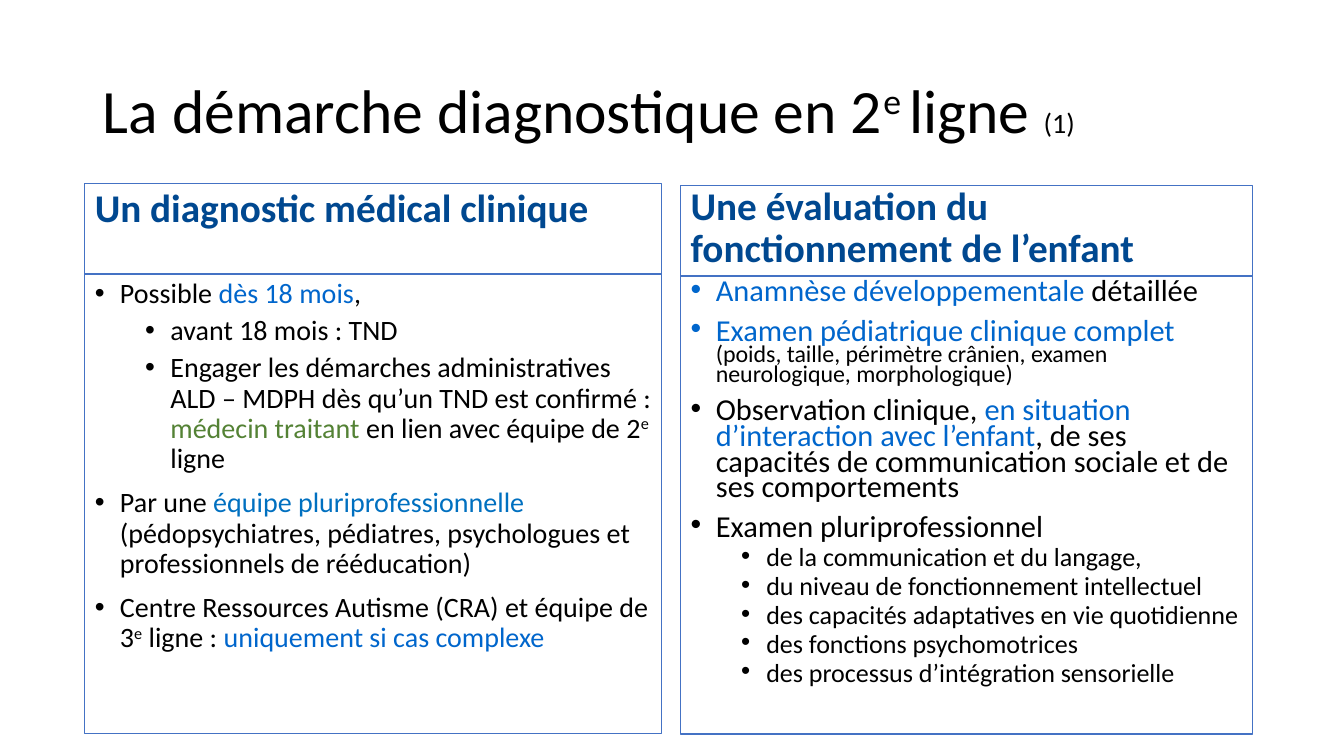
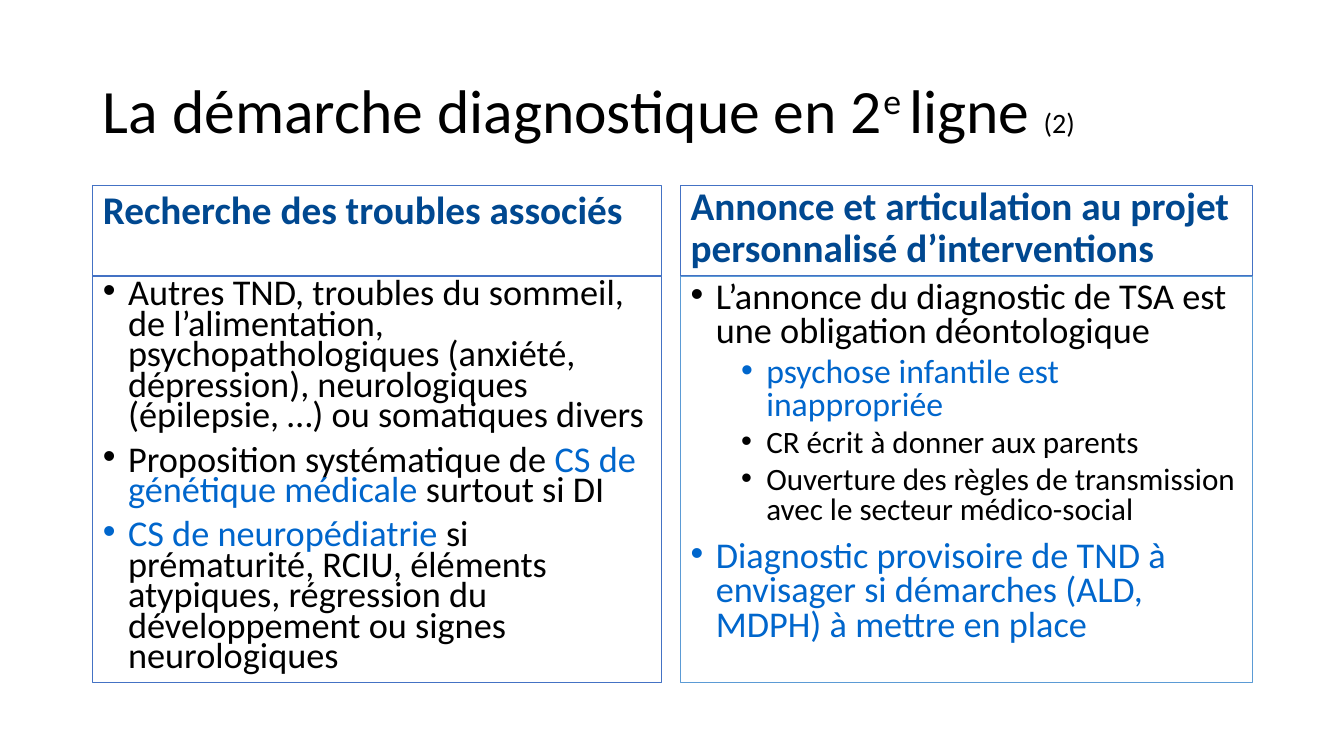
import pptx
import pptx.util
import pptx.dml.color
import pptx.enum.text
import lxml.etree

RGBColor = pptx.dml.color.RGBColor
Inches, Pt = pptx.util.Inches, pptx.util.Pt
ANCHOR = pptx.enum.text.MSO_ANCHOR

# Shared look
FONT = "Calibri"
BLACK = RGBColor(0x00, 0x00, 0x00)
WHITE = RGBColor(0xFF, 0xFF, 0xFF)
NAVY = RGBColor(0x00, 0x48, 0x90)
BLUE = RGBColor(0x00, 0x66, 0xCC)
BRIGHT_BLUE = RGBColor(0x00, 0x70, 0xC0)
GREEN = RGBColor(0x54, 0x82, 0x35)
BORDER = RGBColor(0x44, 0x72, 0xC4)
LIGHT_BORDER = RGBColor(0x5B, 0x9B, 0xD5)
TITLE_BOX = (0.92, 0.4, 11.5, 1.45)
HEADER_HEIGHT = 0.9
BULLET_INDENT = 0.25
LEVEL_STEP = 0.5
COMPARISON_LAYOUT = 4


def colored(text, color=BLUE):
    return {"text": text, "color": color}


def small(text, size):
    return {"text": text, "size": size}


def raised(text):
    return {"text": text, "raised": True}


# Content: each item is (level, size, runs); a plain string is a black run
RIGHT_COLUMN = {"left": 6.75, "right": 12.42, "top": 1.84, "anchor": ANCHOR.BOTTOM}

SLIDES = [
    {
        "number": "(1)",
        "bottom": 7.28,
        "columns": [
            {
                "left": 0.84, "right": 6.56, "top": 1.82, "anchor": ANCHOR.TOP,
                "border": BORDER, "spacing": 0.9,
                "header": "Un diagnostic médical clinique",
                "items": [
                    (0, 20, ["Possible ", colored("dès 18 mois"), ","]),
                    (1, 20, ["avant 18 mois : TND"]),
                    (1, 20, ["Engager les démarches administratives ALD – MDPH "
                             "dès qu’un TND est confirmé : ",
                             colored("médecin traitant", GREEN),
                             " en lien avec équipe de 2", raised("e"), " ligne"]),
                    (0, 20, ["Par une ",
                             colored("équipe pluriprofessionnelle ", BRIGHT_BLUE),
                             "(pédopsychiatres, pédiatres, psychologues et "
                             "professionnels de rééducation)"]),
                    (0, 20, ["Centre Ressources Autisme (CRA) et équipe de 3",
                             raised("e"), " ligne : ",
                             colored("uniquement si cas complexe")]),
                ],
            },
            {
                **RIGHT_COLUMN, "border": BORDER, "spacing": 0.7,
                "header": "Une évaluation du fonctionnement de l’enfant",
                "items": [
                    (0, 21.7, [colored("Anamnèse développementale "), "détaillée"]),
                    (0, 21.7, [colored("Examen pédiatrique clinique complet "),
                               small("(poids, taille, périmètre crânien, examen "
                                     "neurologique, morphologique)", 17.1)]),
                    (0, 21.7, ["Observation clinique, ",
                               colored("en situation d’interaction avec l’enfant"),
                               ", de ses capacités de communication sociale et de "
                               "ses comportements"]),
                    (0, 21.7, ["Examen pluriprofessionnel"]),
                    (1, 18.6, ["de la communication et du langage,"]),
                    (1, 18.6, ["du niveau de fonctionnement intellectuel"]),
                    (1, 18.6, ["des capacités adaptatives en vie quotidienne"]),
                    (1, 18.6, ["des fonctions psychomotrices"]),
                    (1, 18.6, ["des processus d’intégration sensorielle"]),
                ],
            },
        ],
    },
    {
        "number": "(2)",
        "bottom": 6.77,
        "columns": [
            {
                "left": 0.92, "right": 6.56, "top": 1.84, "anchor": ANCHOR.TOP,
                "border": BORDER, "spacing": 0.7,
                "header": "Recherche des troubles associés",
                "items": [
                    (0, 25.9, ["Autres TND, troubles du sommeil, de l’alimentation, "
                               "psychopathologiques (anxiété, dépression), "
                               "neurologiques (épilepsie, …) ou somatiques divers"]),
                    (0, 25.9, ["Proposition systématique de ",
                               colored("CS de génétique médicale "),
                               "surtout si DI"]),
                    (0, 25.9, [colored("CS de neuropédiatrie "),
                               "si prématurité, RCIU, éléments atypiques, régression "
                               "du développement ou signes neurologiques"]),
                ],
            },
            {
                **RIGHT_COLUMN, "border": LIGHT_BORDER, "spacing": 0.8,
                "header": "Annonce et articulation au projet personnalisé "
                          "d’interventions",
                "items": [
                    (0, 25.9, ["L’annonce du diagnostic de TSA est une obligation "
                               "déontologique"]),
                    (1, 24.1, [colored("psychose infantile est inappropriée")]),
                    (1, 22.2, ["CR écrit à donner aux parents"]),
                    (1, 22.2, ["Ouverture des règles de transmission avec le "
                               "secteur médico-social"]),
                    (0, 25.9, [colored("Diagnostic provisoire de TND à envisager si "
                                       "démarches (ALD, MDPH) à mettre en place")]),
                ],
            },
        ],
    },
]


# Text helpers
def add_runs(paragraph, runs, size, color=BLACK, bold=False):
    for part in runs:
        style = {"text": part} if isinstance(part, str) else part
        run = paragraph.add_run()
        run.text = style["text"]
        run.font.name = FONT
        run.font.size = Pt(style.get("size", size))
        run.font.bold = bold
        run.font.color.rgb = style.get("color", color)
        if style.get("raised"):
            run._r.get_or_add_rPr().set("baseline", "30000")


def format_paragraph(paragraph, spacing, before=0):
    paragraph.alignment = pptx.enum.text.PP_ALIGN.LEFT
    paragraph.line_spacing = spacing
    paragraph.space_before = Pt(before)


def add_bullet(paragraph, level):
    paragraph.level = level
    properties = paragraph._p.get_or_add_pPr()
    properties.set("marL", str(Inches(BULLET_INDENT + level * LEVEL_STEP)))
    properties.set("indent", str(-Inches(BULLET_INDENT)))
    for tag, attribute, value in (("buFont", "typeface", "Arial"),
                                  ("buChar", "char", "•")):
        element = lxml.etree.SubElement(properties, pptx.oxml.ns.qn("a:" + tag))
        element.set(attribute, value)


# Placeholder helpers
def place(shape, left, top, width, height, anchor):
    shape.left, shape.top = Inches(left), Inches(top)
    shape.width, shape.height = Inches(width), Inches(height)
    frame = shape.text_frame
    frame.word_wrap = True
    frame.auto_size = pptx.enum.text.MSO_AUTO_SIZE.NONE
    frame.vertical_anchor = anchor
    return frame


def outline(shape, color):
    shape.fill.solid()
    shape.fill.fore_color.rgb = WHITE
    shape.line.color.rgb = color
    shape.line.width = Pt(1)


def fill_column(header, body, column, bottom):
    left, top = column["left"], column["top"]
    width = column["right"] - left
    body_top = top + HEADER_HEIGHT

    frame = place(header, left, top, width, HEADER_HEIGHT, column["anchor"])
    outline(header, BORDER)
    format_paragraph(frame.paragraphs[0], 0.9)
    add_runs(frame.paragraphs[0], [column["header"]], 28, NAVY, bold=True)

    frame = place(body, left, body_top, width, bottom - body_top, ANCHOR.TOP)
    outline(body, column["border"])
    for index, (level, size, runs) in enumerate(column["items"]):
        paragraph = frame.add_paragraph() if index else frame.paragraphs[0]
        before = (5 if level else 10) if index else 0
        format_paragraph(paragraph, column["spacing"], before)
        add_bullet(paragraph, level)
        add_runs(paragraph, runs, size)


def build_slide(presentation, content):
    slide = presentation.slides.add_slide(
        presentation.slide_layouts[COMPARISON_LAYOUT])
    title = place(slide.shapes.title, *TITLE_BOX, ANCHOR.MIDDLE).paragraphs[0]
    format_paragraph(title, 0.9)
    add_runs(title, ["La démarche diagnostique en 2", raised("e "), "ligne ",
                     small(content["number"], 20)], 44)
    placeholders = {shape.placeholder_format.idx: shape
                    for shape in slide.placeholders}
    for index, column in enumerate(content["columns"]):
        first = 1 + 2 * index
        fill_column(placeholders[first], placeholders[first + 1],
                    column, content["bottom"])


def main():
    presentation = pptx.Presentation()
    presentation.slide_width = Inches(13.33)
    presentation.slide_height = Inches(7.5)
    for content in SLIDES:
        build_slide(presentation, content)
    presentation.save("out.pptx")


if __name__ == "__main__":
    main()
